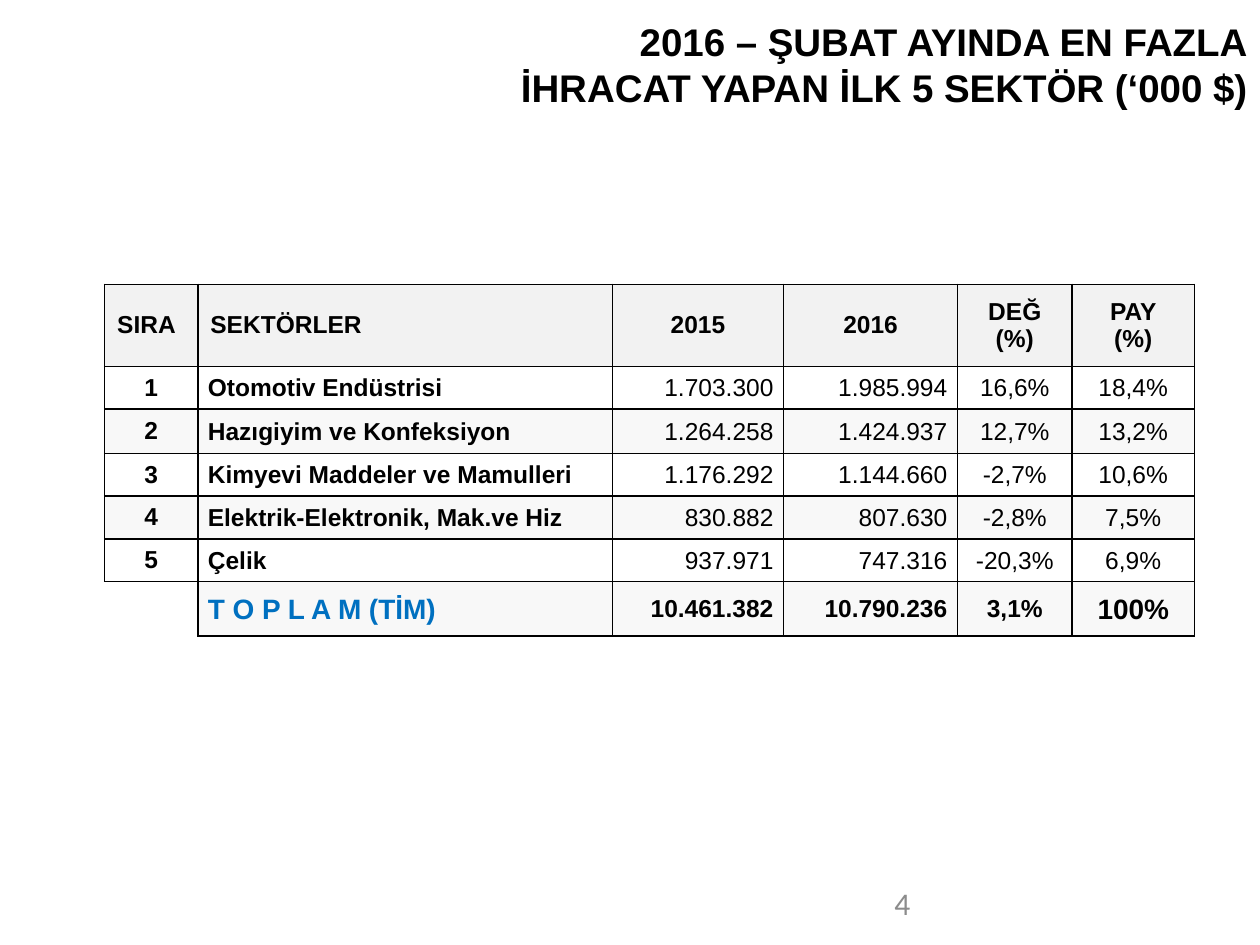
from lxml import etree
from pptx import Presentation
from pptx import util as u
from pptx.dml import color
from pptx.enum import text
from pptx.oxml import ns

WIDTH, HEIGHT = 10, 7.5
BLACK, BLUE, GREY = "000000", "0070C0", "8C8C8C"
HEADER_FILL, BAND_FILL = "F2F2F2", "F8F8F8"
LEFT, CENTER, RIGHT = text.PP_ALIGN.LEFT, text.PP_ALIGN.CENTER, text.PP_ALIGN.RIGHT

COLUMN_WIDTHS = [0.74, 3.29, 1.36, 1.38, 0.91, 0.97]
ROW_HEIGHTS = [0.65, 0.34, 0.35, 0.34, 0.34, 0.34, 0.43]
COLUMN_ALIGNS = [CENTER, LEFT, RIGHT, RIGHT, CENTER, CENTER]
ROWS = [
    ["SIRA", "SEKTÖRLER", "2015", "2016", "DEĞ\n(%)", "PAY\n(%)"],
    ["1", "Otomotiv Endüstrisi", "1.703.300", "1.985.994", "16,6%", "18,4%"],
    ["2", "Hazıgiyim ve Konfeksiyon", "1.264.258", "1.424.937", "12,7%", "13,2%"],
    ["3", "Kimyevi Maddeler ve Mamulleri", "1.176.292", "1.144.660", "-2,7%", "10,6%"],
    ["4", "Elektrik-Elektronik, Mak.ve Hiz", "830.882", "807.630", "-2,8%", "7,5%"],
    ["5", "Çelik", "937.971", "747.316", "-20,3%", "6,9%"],
    ["", "T O P L A M (TİM)", "10.461.382", "10.790.236", "3,1%", "100%"],
]
TOTAL = len(ROWS) - 1


def rgb(value):
    return color.RGBColor.from_string(value)


def write(frame, content, size=14, font="Arial", fill=BLACK, bold=False, align=LEFT):
    """Write one paragraph for each line of content."""
    for index, line in enumerate(content.split("\n")):
        paragraph = frame.add_paragraph() if index else frame.paragraphs[0]
        paragraph.alignment = align
        run = paragraph.add_run()
        run.text = line
        run.font.size = u.Pt(size)
        run.font.name = font
        run.font.bold = bold
        run.font.color.rgb = rgb(fill)


def scale(box):
    """Turn shares of the slide into lengths."""
    return [u.Inches(share * side) for share, side in zip(box, [WIDTH, HEIGHT] * 2)]


def add_label(slide, box, content, **style):
    frame = slide.shapes.add_textbox(*scale(box)).text_frame
    frame.word_wrap = True
    frame.vertical_anchor = text.MSO_ANCHOR.MIDDLE
    write(frame, content, **style)


def set_borders(cell, visible):
    properties = cell._tc.get_or_add_tcPr()
    for side in "LRTB":
        line = etree.SubElement(properties, ns.qn(f"a:ln{side}"), w=str(u.Pt(1)))
        if side in visible:
            solid = etree.SubElement(line, ns.qn("a:solidFill"))
            etree.SubElement(solid, ns.qn("a:srgbClr"), val=BLACK)
        else:
            etree.SubElement(line, ns.qn("a:noFill"))


def format_cell(cell, row, column):
    # Borders and banding
    corner = row == TOTAL and column == 0
    set_borders(cell, "TR" if corner else "LRTB")
    if corner or (row % 2 and row):
        cell.fill.background()
    else:
        cell.fill.solid()
        cell.fill.fore_color.rgb = rgb(BAND_FILL if row else HEADER_FILL)
    if corner:
        return

    # Margins and alignment
    cell.vertical_anchor = text.MSO_ANCHOR.MIDDLE
    align = COLUMN_ALIGNS[column]
    if row and column:
        cell.margin_left = u.Inches(0.08 if align == LEFT else 0.01)
        cell.margin_right = u.Inches(0.08 if align == RIGHT else 0.01)
        cell.margin_top, cell.margin_bottom = u.Inches(0.01), 0
    if row == 0:
        align = LEFT if column < 2 else CENTER

    # Text
    write(cell.text_frame, ROWS[row][column], align=align,
          size=16 if row == TOTAL and column in (1, 5) else 14,
          fill=BLUE if row == TOTAL and column == 1 else BLACK,
          bold=row in (0, TOTAL) or column < 2)


def add_sector_table(slide, box):
    left, top, width, height = scale(box)
    table = slide.shapes.add_table(
        len(ROWS), len(COLUMN_WIDTHS), left, top, width, height).table
    table.first_row = table.horz_banding = False
    for column, share in zip(table.columns, COLUMN_WIDTHS):
        column.width = int(width * share / sum(COLUMN_WIDTHS))
    for row, share in zip(table.rows, ROW_HEIGHTS):
        row.height = int(height * share / sum(ROW_HEIGHTS))
    for row in range(len(ROWS)):
        for column in range(len(COLUMN_WIDTHS)):
            format_cell(table.cell(row, column), row, column)


def main():
    presentation = Presentation()
    presentation.slide_width, presentation.slide_height = u.Inches(WIDTH), u.Inches(HEIGHT)
    slide = presentation.slides.add_slide(presentation.slide_layouts[6])

    # Page number, title and table
    add_label(slide, (0.7, 0.93, 0.21, 0.05), "4", size=18, font="Calibri", fill=GREY)
    add_label(slide, (0.106, 0.012, 0.894, 0.112),
              "2016 – ŞUBAT AYINDA EN FAZLA\nİHRACAT YAPAN İLK 5 SEKTÖR (‘000 $)",
              size=22, bold=True, align=RIGHT)
    add_sector_table(slide, (0.083, 0.301, 0.865, 0.372))

    presentation.save("out.pptx")


if __name__ == "__main__":
    main()
